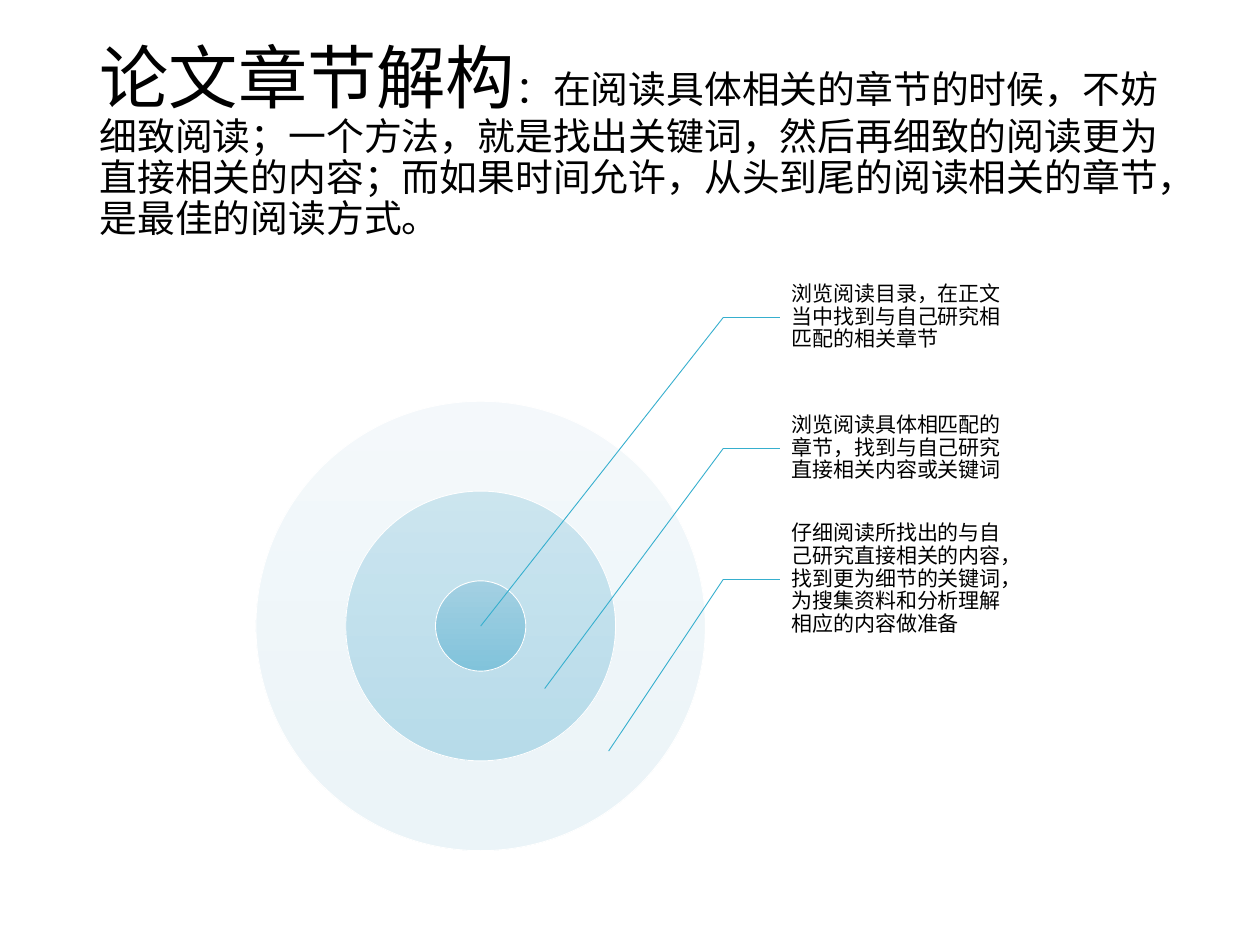
from lxml.etree import SubElement
from pptx import Presentation
from pptx.dml.color import RGBColor
from pptx.enum.shapes import MSO_CONNECTOR, MSO_SHAPE
from pptx.enum.text import MSO_ANCHOR, MSO_AUTO_SIZE, PP_ALIGN
from pptx.oxml.ns import qn
from pptx.util import Cm, Pt

BLACK = RGBColor(0x00, 0x00, 0x00)
WHITE = RGBColor(0xFF, 0xFF, 0xFF)
TEAL = RGBColor(0x36, 0xAF, 0xCE)
PALE = (RGBColor(0xEA, 0xF3, 0xF8), RGBColor(0xD8, 0xEA, 0xF2))
MID = (RGBColor(0xBF, 0xDF, 0xEB), RGBColor(0xA5, 0xD3, 0xE5))
DEEP = (RGBColor(0xA3, 0xD0, 0xE2), RGBColor(0x81, 0xC3, 0xDB))
FONT = "Times New Roman"


def write(frame, runs):
    frame.word_wrap = True
    frame.auto_size = MSO_AUTO_SIZE.NONE
    frame.vertical_anchor = MSO_ANCHOR.MIDDLE
    para = frame.paragraphs[0]
    para.alignment = PP_ALIGN.LEFT
    para.line_spacing = 0.9
    for text, size in runs:
        run = para.add_run()
        run.text = text
        run.font.name = FONT
        run.font.size = Pt(size)
        run.font.color.rgb = BLACK


def draw_line(x1, y1, x2, y2):
    line = slide.shapes.add_connector(
        MSO_CONNECTOR.STRAIGHT, Cm(x1), Cm(y1), Cm(x2), Cm(y2))
    line.line.color.rgb = TEAL
    line.line.width = Pt(0.5)
    SubElement(line._element.spPr, qn("a:effectLst"))


deck = Presentation()
deck.slide_width, deck.slide_height = Cm(25.4), Cm(19.05)
slide = deck.slides.add_slide(deck.slide_layouts[5])

title = slide.shapes.title
title.left, title.top = Cm(1.75), Cm(1.02)
title.width, title.height = Cm(21.9), Cm(3.68)
write(title.text_frame, [
    ("论文章节解构", 39.6),
    ("：在阅读具体相关的章节的时候，不妨细致阅读；一个方法，就是找出关键词，"
     "然后再细致的阅读更为直接相关的内容；而如果时间允许，从头到尾的阅读相关的章节，"
     "是最佳的阅读方式。", 21.6),
])

mid_x, mid_y = 9.69, 12.62
for radius, tones, alpha in [(4.53, PALE, 50), (2.72, MID, 75), (0.91, DEEP, 100)]:
    ring = slide.shapes.add_shape(
        MSO_SHAPE.OVAL, Cm(mid_x - radius), Cm(mid_y - radius),
        Cm(2 * radius), Cm(2 * radius))
    ring.shadow.inherit = False
    ring.line.color.rgb = WHITE
    ring.line.width = Pt(0.5)
    ring.fill.gradient()
    ring.fill.gradient_angle = 270
    for stop, tone in zip(ring.fill.gradient_stops, tones):
        stop.color.rgb = tone
    for color in ring._element.spPr.findall(".//" + qn("a:gs") + "/" + qn("a:srgbClr")):
        SubElement(color, qn("a:alpha"), val=str(alpha * 1000))

notes = [
    "浏览阅读目录，在正文当中找到与自己研究相匹配的相关章节",
    "浏览阅读具体相匹配的章节，找到与自己研究直接相关内容或关键词",
    "仔细阅读所找出的与自己研究直接相关的内容，找到更为细节的关键词，"
    "为搜集资料和分析理解相应的内容做准备",
]
left, bend, height = 15.72, 14.58, 2.64
for i, note in enumerate(notes):
    top = 5.08 + i * height
    level = top + height / 2
    box = slide.shapes.add_textbox(Cm(left), Cm(top), Cm(4.52), Cm(height))
    frame = box.text_frame
    frame.margin_left = Cm(0.23)
    frame.margin_top = frame.margin_right = frame.margin_bottom = Cm(0.05)
    write(frame, [(note, 12)])
    draw_line(bend, level, left, level)
    draw_line(bend, level, mid_x + i * 1.29, mid_y + i * 1.26)

deck.save("out.pptx")
